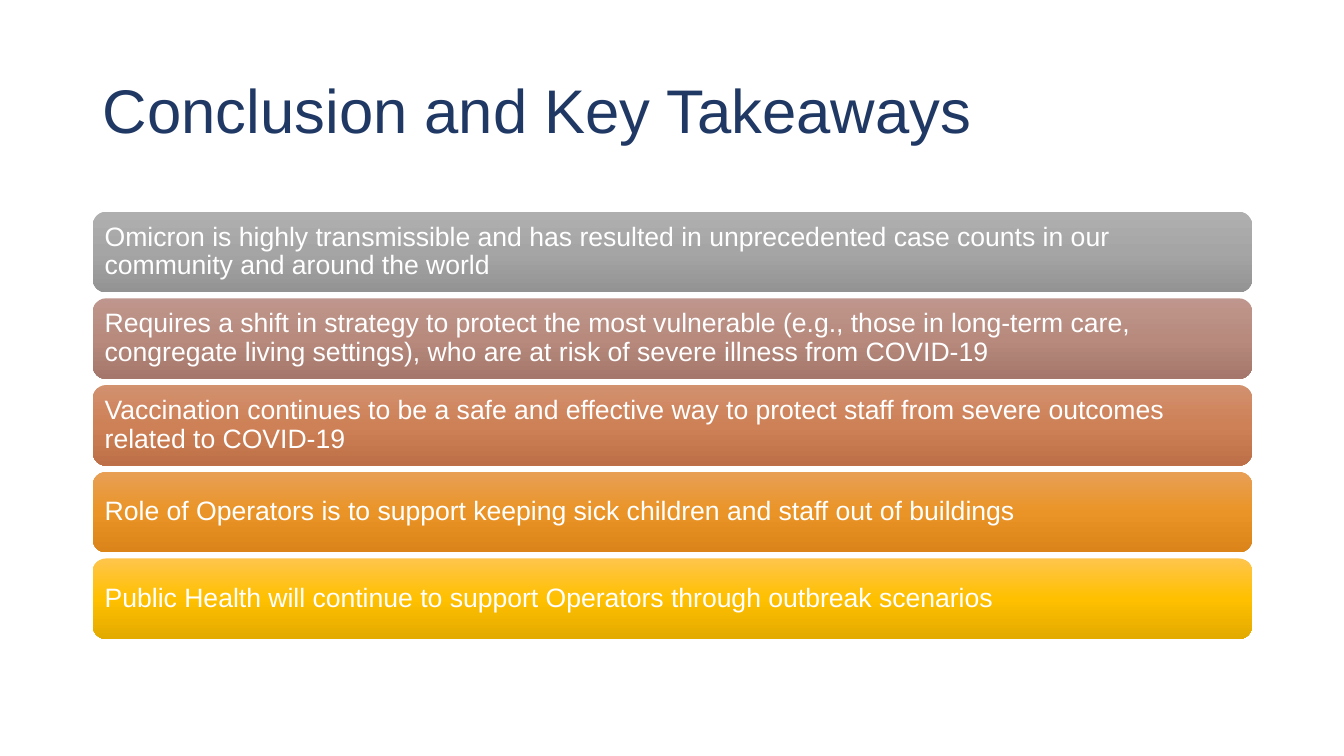
from copy import deepcopy
from pptx import Presentation
from pptx.dml.color import RGBColor
from pptx.enum.shapes import MSO_SHAPE
from pptx.enum.text import MSO_ANCHOR, MSO_AUTO_SIZE, PP_ALIGN
from pptx.oxml.ns import qn
from pptx.util import Inches, Pt

THEME = {
    "font": "Arial",
    "title": ("203864", 44),
    "body": ("FFFFFF", 19),
    "bars": [
        ("AFAFAF", "A5A5A5", "939393"),
        ("BF968D", "B78A7D", "A5776C"),
        ("D2916F", "CE8056", "BD7047"),
        ("E8A056", "EA9427", "DA8419"),
        ("FFC54B", "FFC000", "E3AA00"),
    ],
}
POINTS = [
    "Omicron is highly transmissible and has resulted in unprecedented case counts in our community and around the world",
    "Requires a shift in strategy to protect the most vulnerable (e.g., those in long-term care, congregate living settings), who are at risk of severe illness from COVID-19",
    "Vaccination continues to be a safe and effective way to protect staff from severe outcomes related to COVID-19",
    "Role of Operators is to support keeping sick children and staff out of buildings",
    "Public Health will continue to support Operators through outbreak scenarios",
]
LEFT, TOP, WIDTH, HEIGHT, STEP = 0.92, 2.1, 11.5, 0.8, 0.86


def write(shape, text, style):
    frame = shape.text_frame
    frame.text = text
    frame.word_wrap = True
    frame.auto_size = MSO_AUTO_SIZE.NONE
    frame.vertical_anchor = MSO_ANCHOR.MIDDLE
    line = frame.paragraphs[0]
    line.alignment = PP_ALIGN.LEFT
    line.line_spacing = 0.9
    color, size = THEME[style]
    font = line.runs[0].font
    font.name = THEME["font"]
    font.size = Pt(size)
    font.color.rgb = RGBColor.from_string(color)


def shade(shape, colors):
    shape.fill.gradient()
    shape.fill.gradient_angle = 270
    stops = shape.element.spPr.find(qn("a:gradFill")).find(qn("a:gsLst"))
    stops.insert(1, deepcopy(stops[0]))
    for stop, color, place in zip(shape.fill.gradient_stops, colors, (0, 0.5, 1)):
        stop.color.rgb = RGBColor.from_string(color)
        stop.position = place


deck = Presentation()
deck.slide_width, deck.slide_height = Inches(13.33), Inches(7.5)
slide = deck.slides.add_slide(deck.slide_layouts[5])

title = slide.shapes.title
title.left, title.top = Inches(LEFT), Inches(0.4)
title.width, title.height = Inches(WIDTH), Inches(1.45)
write(title, "Conclusion and Key Takeaways", "title")

for row, (point, colors) in enumerate(zip(POINTS, THEME["bars"])):
    bar = slide.shapes.add_shape(
        MSO_SHAPE.ROUNDED_RECTANGLE,
        Inches(LEFT), Inches(TOP + row * STEP), Inches(WIDTH), Inches(HEIGHT),
    )
    bar.shadow.inherit = False
    bar.line.fill.background()
    shade(bar, colors)
    write(bar, point, "body")
    frame = bar.text_frame
    frame.margin_left = frame.margin_right = Inches(0.08)
    frame.margin_top = frame.margin_bottom = Inches(0.08)

deck.save("out.pptx")
